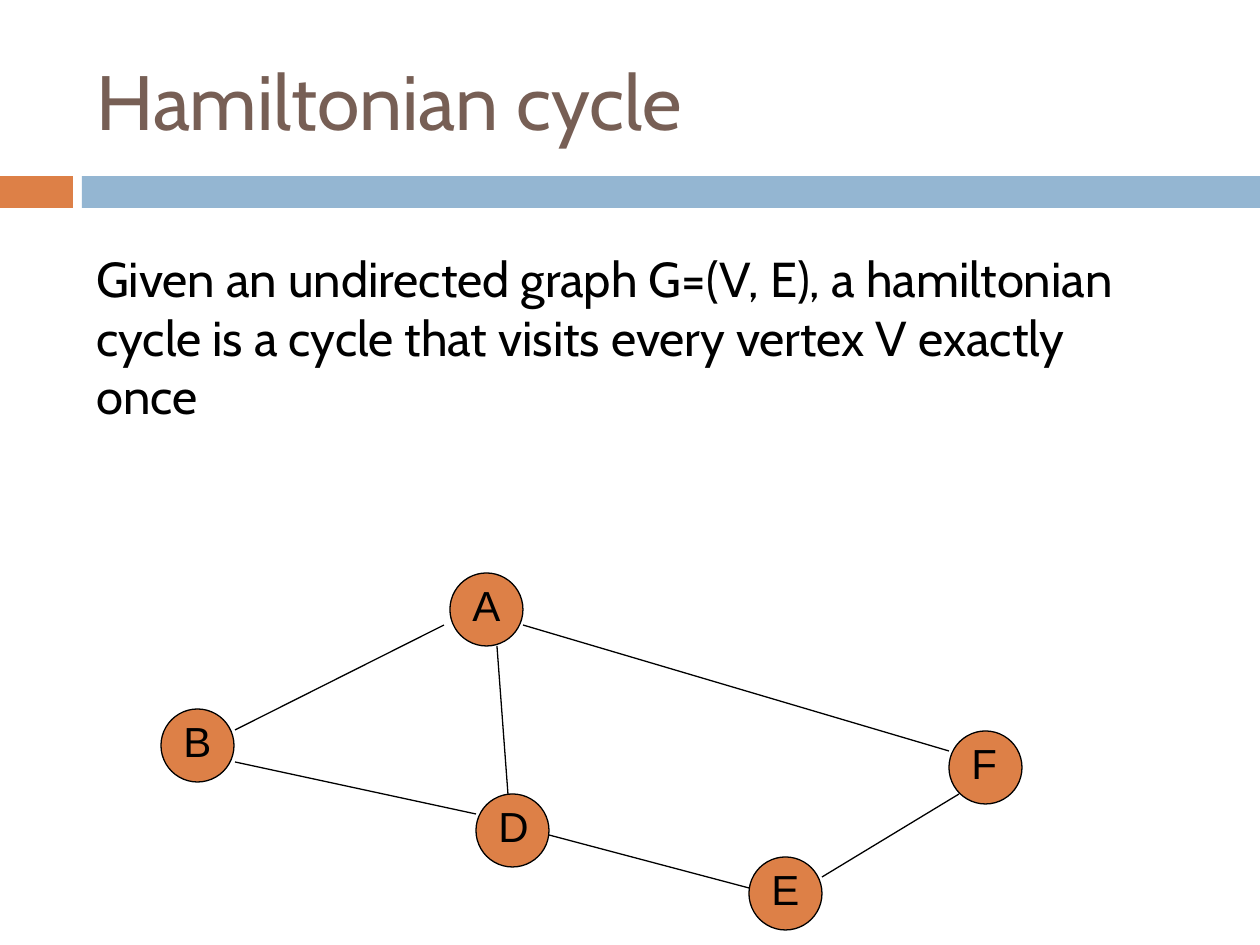
import pptx
import pptx.util
import pptx.dml.color
import pptx.enum.shapes
import pptx.enum.text
import pptx.oxml.ns
from dataclasses import dataclass
from lxml import etree


@dataclass(frozen=True)
class Theme:
    accent: str = "DD8047"
    band: str = "94B6D2"
    heading: str = "775F55"
    ink: str = "000000"
    text_font: str = "Cabin"
    label_font: str = "Arial"
    title_size: int = 44
    body_size: int = 28
    label_size: int = 24
    line_width: float = 0.75


THEME = Theme()
PX_PER_INCH = 126

TITLE = "Hamiltonian cycle"
DEFINITION = (
    "Given an undirected graph G=(V, E), a hamiltonian cycle "
    "is a cycle that visits every vertex V exactly once"
)
BANDS = [((0, 176, 73, 32), THEME.accent), ((82, 176, 1178, 32), THEME.band)]

# Top left corner of each vertex circle
VERTICES = {
    "A": (450, 573),
    "B": (161, 709),
    "E": (749, 857),
    "D": (476, 794),
    "F": (949, 731),
}
VERTEX_SIZE = 73
LABEL_SIZE = 63
LABEL_OFFSET = 10

EDGES = [
    ((235, 730), (444, 625)),  # B-A
    ((235, 762), (476, 814)),  # B-D
    ((508, 794), (497, 646)),  # D-A
    ((549, 835), (749, 888)),  # D-E
    ((822, 877), (959, 794)),  # E-F
    ((523, 625), (949, 751)),  # A-F
]


def emu(*lengths):
    return [round(length * pptx.util.Inches(1) / PX_PER_INCH) for length in lengths]


def rgb(color):
    return pptx.dml.color.RGBColor.from_string(color)


def outline(line):
    line.color.rgb = rgb(THEME.ink)
    line.width = pptx.util.Pt(THEME.line_width)


def add_filled(shapes, preset, box, color):
    shape = shapes.add_shape(preset, *emu(*box))
    shape.shadow.inherit = False
    shape.fill.solid()
    shape.fill.fore_color.rgb = rgb(color)
    shape.line.fill.background()
    return shape


def add_text(shapes, box, text, font_name, size, color):
    frame = shapes.add_textbox(*emu(*box)).text_frame
    frame.word_wrap = True
    paragraph = frame.paragraphs[0]
    paragraph.text = text
    paragraph.font.name = font_name
    paragraph.font.size = pptx.util.Pt(size)
    paragraph.font.color.rgb = rgb(color)
    return frame


def add_vertex(slide, name, left, top):
    vertex = slide.shapes.add_group_shape()
    circle = add_filled(
        vertex.shapes,
        pptx.enum.shapes.MSO_SHAPE.OVAL,
        (left, top, VERTEX_SIZE, VERTEX_SIZE),
        THEME.accent,
    )
    outline(circle.line)
    add_text(
        vertex.shapes,
        (left + LABEL_OFFSET, top, LABEL_SIZE, LABEL_SIZE),
        name, THEME.label_font, THEME.label_size, THEME.ink,
    )


def add_edge(slide, start, end):
    edge = slide.shapes.add_connector(
        pptx.enum.shapes.MSO_CONNECTOR.STRAIGHT, *emu(*start, *end)
    )
    outline(edge.line)
    etree.SubElement(edge._element.spPr, pptx.oxml.ns.qn("a:effectLst"))


def main():
    deck = pptx.Presentation()
    deck.slide_width, deck.slide_height = emu(1260, 945)
    slide = deck.slides.add_slide(deck.slide_layouts[6])

    for box, color in BANDS:
        add_filled(slide.shapes, pptx.enum.shapes.MSO_SHAPE.RECTANGLE, box, color)

    title = add_text(slide.shapes, (84, 32, 1124, 136), TITLE,
                     THEME.text_font, THEME.title_size, THEME.heading)
    title.vertical_anchor = pptx.enum.text.MSO_ANCHOR.MIDDLE
    add_text(slide.shapes, (84, 242, 1066, 131), DEFINITION,
             THEME.text_font, THEME.body_size, THEME.ink)

    for name, (left, top) in VERTICES.items():
        add_vertex(slide, name, left, top)
    for start, end in EDGES:
        add_edge(slide, start, end)

    deck.save("out.pptx")


if __name__ == "__main__":
    main()
